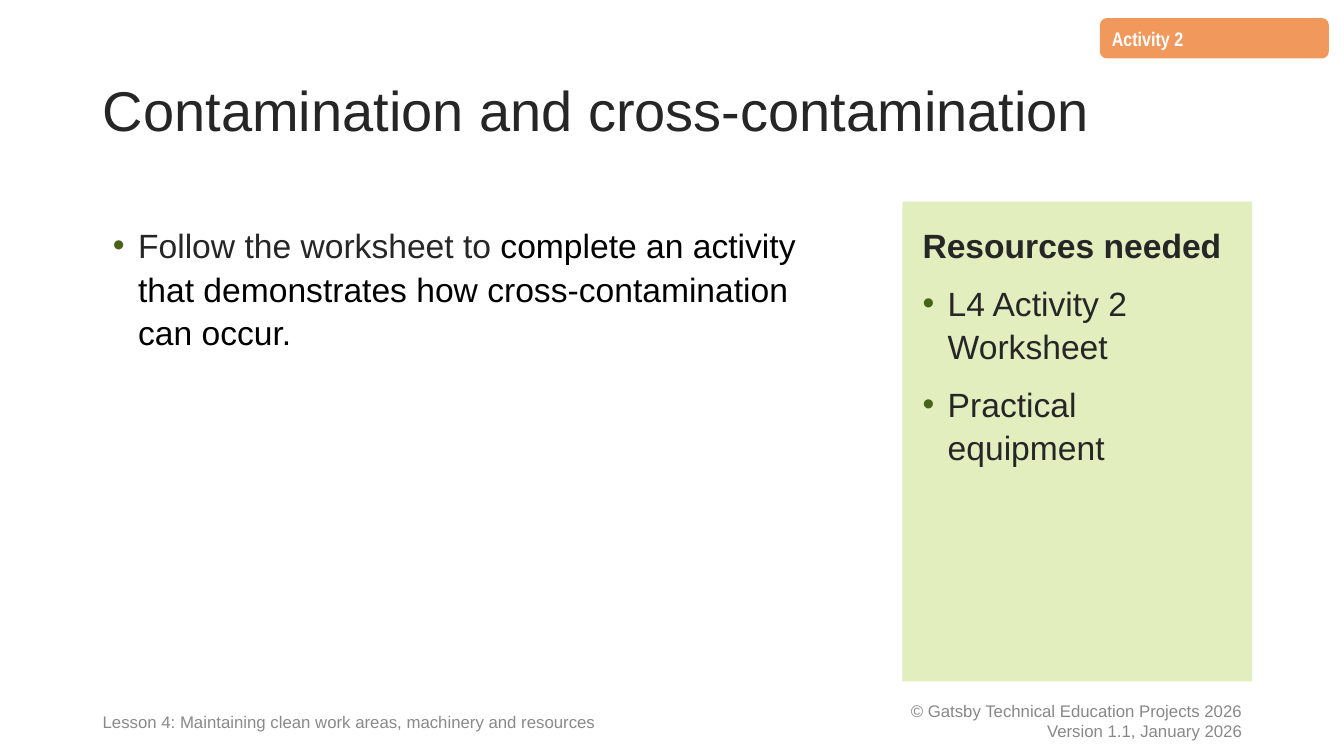
from dataclasses import dataclass

from lxml.etree import SubElement
from pptx import Presentation
from pptx.dml.color import RGBColor
from pptx.enum.shapes import MSO_SHAPE
from pptx.enum.text import MSO_ANCHOR, MSO_AUTO_SIZE, PP_ALIGN
from pptx.oxml.ns import qn
from pptx.text.text import TextFrame, _Paragraph
from pptx.util import Inches, Pt


@dataclass(frozen=True)
class Theme:
    font: str = "Arial"
    tag_font: str = "Arial Narrow"
    title_size: int = 40
    body_size: int = 24
    tag_size: int = 14
    footer_size: int = 12
    text: str = "262626"
    black: str = "000000"
    white: str = "FFFFFF"
    bullet: str = "466318"
    tag_fill: str = "F1995D"
    resources_fill: str = "E2EEBE"
    lesson_text: str = "898989"
    copyright_text: str = "888888"


THEME = Theme()


@dataclass(frozen=True)
class TextRun:
    text: str
    size: int = THEME.body_size
    color: str = THEME.text
    font: str = THEME.font
    bold: bool = False


@dataclass(frozen=True)
class Line:
    runs: tuple[TextRun, ...]
    bulleted: bool = False
    space_before: float = 0
    spacing: float = 1.08
    align: PP_ALIGN = PP_ALIGN.LEFT


@dataclass(frozen=True)
class Block:
    left: float
    top: float
    width: float
    height: float
    lines: tuple[Line, ...]
    fill: str | None = None
    outline: MSO_SHAPE = MSO_SHAPE.RECTANGLE
    anchor: MSO_ANCHOR = MSO_ANCHOR.TOP
    margins: tuple[float, float] = (0.1, 0.05)


# Shared layout
LEFT, RIGHT = 0.92, 12.42
PANEL_TOP, PANEL_HEIGHT = 2.0, 4.76
FOOTER_TOP, FOOTER_HEIGHT = 6.95, 0.4
PANEL_MARGINS = (0.2, 0.2)
RESOURCES_WIDTH, COPYRIGHT_WIDTH = 3.47, 4.5

TITLE = Block(
    LEFT, 0.4, RIGHT - LEFT, 1.45,
    (Line((TextRun("Contamination and cross-contamination", THEME.title_size),), spacing=0.9),),
    anchor=MSO_ANCHOR.MIDDLE,
)

COPYRIGHT_LINES = ("© Gatsby Technical Education Projects 2026", "Version 1.1, January 2026")
RESOURCES = ("L4 Activity 2 Worksheet", "Practical equipment")

BLOCKS = (
    # Activity tag
    Block(
        10.91, 0.18, 2.27, 0.4,
        (Line((TextRun("Activity 2", THEME.tag_size, THEME.white, THEME.tag_font, True),)),),
        THEME.tag_fill, MSO_SHAPE.FLOWCHART_ALTERNATE_PROCESS,
    ),
    # Task panel
    Block(
        LEFT, PANEL_TOP, 7.36, PANEL_HEIGHT,
        (Line((
            TextRun("Follow the worksheet to "),
            TextRun("complete an activity that demonstrates how cross-contamination can occur.",
                    color=THEME.black),
        ), bulleted=True),),
        THEME.white, margins=PANEL_MARGINS,
    ),
    # Resources panel
    Block(
        RIGHT - RESOURCES_WIDTH, PANEL_TOP, RESOURCES_WIDTH, PANEL_HEIGHT,
        (Line((TextRun("Resources needed", bold=True),)),
         *(Line((TextRun(item),), bulleted=True, space_before=10) for item in RESOURCES)),
        THEME.resources_fill, margins=PANEL_MARGINS,
    ),
    # Footers
    Block(
        LEFT, FOOTER_TOP, 5.23, FOOTER_HEIGHT,
        (Line((TextRun("Lesson 4: Maintaining clean work areas, machinery and resources",
                       THEME.footer_size, THEME.lesson_text),)),),
        anchor=MSO_ANCHOR.MIDDLE,
    ),
    Block(
        RIGHT - COPYRIGHT_WIDTH, FOOTER_TOP, COPYRIGHT_WIDTH, FOOTER_HEIGHT,
        tuple(Line((TextRun(text, THEME.footer_size, THEME.copyright_text),),
                   spacing=1.0, align=PP_ALIGN.RIGHT) for text in COPYRIGHT_LINES),
        anchor=MSO_ANCHOR.MIDDLE,
    ),
)


def add_bullet(paragraph: _Paragraph) -> None:
    properties = paragraph._p.get_or_add_pPr()
    properties.set("marL", str(Inches(0.25)))
    properties.set("indent", str(Inches(-0.25)))
    color = SubElement(properties, qn("a:buClr"))
    SubElement(color, qn("a:srgbClr"), val=THEME.bullet)
    SubElement(properties, qn("a:buFont"), typeface=THEME.font)
    SubElement(properties, qn("a:buChar"), char="•")


def write_text(frame: TextFrame, block: Block) -> None:
    frame.word_wrap = True
    frame.auto_size = MSO_AUTO_SIZE.NONE
    frame.vertical_anchor = block.anchor
    horizontal, vertical = block.margins
    frame.margin_left = frame.margin_right = Inches(horizontal)
    frame.margin_top = frame.margin_bottom = Inches(vertical)
    for index, line in enumerate(block.lines):
        paragraph = frame.add_paragraph() if index else frame.paragraphs[0]
        paragraph.alignment = line.align
        paragraph.line_spacing = line.spacing
        if line.space_before:
            paragraph.space_before = Pt(line.space_before)
        if line.bulleted:
            add_bullet(paragraph)
        for text_run in line.runs:
            run = paragraph.add_run()
            run.text = text_run.text
            run.font.name = text_run.font
            run.font.size = Pt(text_run.size)
            run.font.bold = text_run.bold
            run.font.color.rgb = RGBColor.from_string(text_run.color)


def add_block(slide, block: Block) -> None:
    bounds = [Inches(value) for value in (block.left, block.top, block.width, block.height)]
    if block.fill is None:
        shape = slide.shapes.add_textbox(*bounds)
    else:
        shape = slide.shapes.add_shape(block.outline, *bounds)
        shape.shadow.inherit = False
        shape.fill.solid()
        shape.fill.fore_color.rgb = RGBColor.from_string(block.fill)
        shape.line.fill.background()
    write_text(shape.text_frame, block)


def set_title(slide, block: Block) -> None:
    title = slide.shapes.title
    title.left, title.top = Inches(block.left), Inches(block.top)
    title.width, title.height = Inches(block.width), Inches(block.height)
    write_text(title.text_frame, block)


def main() -> None:
    presentation = Presentation()
    presentation.slide_width = Inches(13.33)
    presentation.slide_height = Inches(7.5)
    slide = presentation.slides.add_slide(presentation.slide_layouts.get_by_name("Title Only"))
    set_title(slide, TITLE)
    for block in BLOCKS:
        add_block(slide, block)
    presentation.save("out.pptx")


if __name__ == "__main__":
    main()
